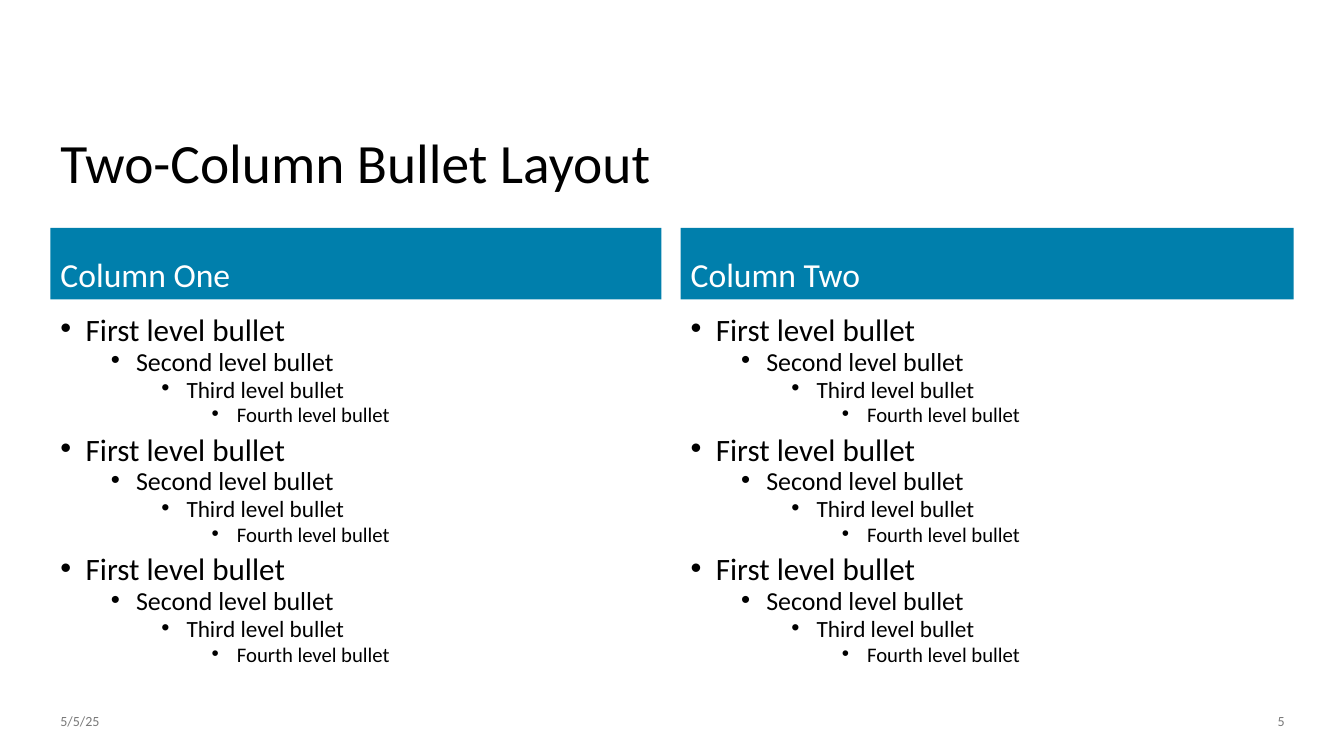
import dataclasses

import pptx
import pptx.dml.color
import pptx.enum.text
import pptx.oxml
import pptx.oxml.ns
import pptx.util

Inches = pptx.util.Inches
Pt = pptx.util.Pt
Anchor = pptx.enum.text.MSO_ANCHOR
Align = pptx.enum.text.PP_ALIGN


@dataclasses.dataclass(frozen=True)
class Theme:
    """Font, colours and type sizes of the slide."""
    font: str = "Calibri"
    ink: str = "000000"
    band: str = "007FAC"
    light: str = "FFFFFF"
    grey: str = "797979"
    title: float = 39.6
    head: float = 24
    foot: float = 10
    levels: tuple = (22.2, 18.5, 16.6, 14.8)


THEME = Theme()
COLUMNS = (("Column One", 0.5, 6.06), ("Column Two", 6.75, 6.08))
BULLETS = [f"{rank} level bullet" for rank in ("First", "Second", "Third", "Fourth")]
GROUPS = 3


def place(shape, left, top, width, height):
    """Move and size a shape, in inches."""
    shape.left, shape.top = Inches(left), Inches(top)
    shape.width, shape.height = Inches(width), Inches(height)


def style(para, size, color, align=Align.LEFT):
    """Format a paragraph and its runs."""
    para.alignment = align
    for run in para.runs:
        font = run.font
        font.name, font.size, font.bold = THEME.font, Pt(size), False
        font.color.rgb = pptx.dml.color.RGBColor.from_string(color)


def write(shape, text, size, color, anchor, align=Align.LEFT, lines=1.0):
    """Fill a shape with one line of text."""
    frame = shape.text_frame
    frame.text = text
    frame.word_wrap = True
    frame.auto_size = pptx.enum.text.MSO_AUTO_SIZE.NONE
    frame.vertical_anchor = anchor
    para = frame.paragraphs[0]
    para.line_spacing, para.space_before = lines, Pt(0)
    style(para, size, color, align)


def mark(para, level):
    """Give a paragraph a round bullet with a hanging indent."""
    props = para._p.get_or_add_pPr()
    props.set("marL", str(Inches(0.25 + 0.5 * level)))
    props.set("indent", str(Inches(-0.25)))
    space = pptx.oxml.ns.nsdecls("a")
    for tag in ('buFont {} typeface="Arial"', 'buChar {} char="•"'):
        props.append(pptx.oxml.parse_xml(f"<a:{tag.format(space)}/>"))


def fill_list(shape):
    """Fill a placeholder with the groups of nested bullets."""
    frame = shape.text_frame
    frame.text = "\n".join(BULLETS * GROUPS)
    frame.auto_size = pptx.enum.text.MSO_AUTO_SIZE.NONE
    frame.vertical_anchor = Anchor.TOP
    for index, para in enumerate(frame.paragraphs):
        level = index % len(BULLETS)
        mark(para, level)
        para.level = level
        para.line_spacing = 0.7
        para.space_before = Pt(0 if index == 0 else 5 if level else 10)
        style(para, THEME.levels[level], THEME.ink)


def add_column(head, body, text, left, width):
    """Lay out one column: a coloured band above a list."""
    place(head, left, 2.26, width, 0.71)
    head.fill.solid()
    head.fill.fore_color.rgb = pptx.dml.color.RGBColor.from_string(THEME.band)
    write(head, text, THEME.head, THEME.light, Anchor.BOTTOM, lines=0.9)
    place(body, left, 3.13, width, 3.62)
    fill_list(body)


def add_foot(slide, text, left, align):
    """Add a small grey text at the foot of the slide."""
    box = slide.shapes.add_textbox(Inches(left), Inches(6.95), Inches(3.42), Inches(0.4))
    write(box, text, THEME.foot, THEME.grey, Anchor.MIDDLE, align)


def main():
    """Build the slide and save it."""
    deck = pptx.Presentation()
    deck.slide_width, deck.slide_height = Inches(13.33), Inches(7.5)
    slide = deck.slides.add_slide(deck.slide_layouts[4])
    title, *parts = slide.placeholders
    place(title, 0.5, 1.3, 12.33, 0.69)
    write(title, "Two-Column Bullet Layout", THEME.title, THEME.ink, Anchor.MIDDLE, lines=0.9)
    for head, body, column in zip(parts[::2], parts[1::2], COLUMNS):
        add_column(head, body, *column)
    add_foot(slide, "5/5/25", 0.5, Align.LEFT)
    add_foot(slide, "5", 9.42, Align.RIGHT)
    deck.save("out.pptx")


if __name__ == "__main__":
    main()
